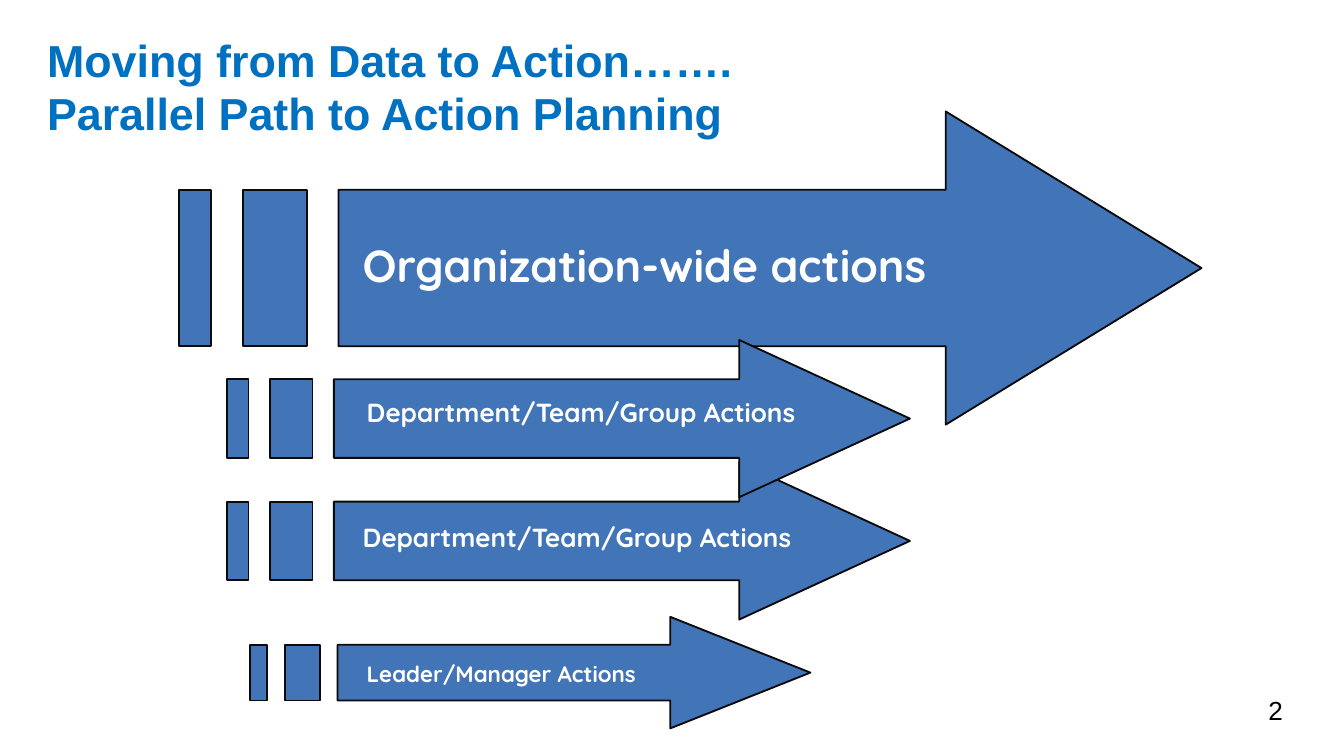
from dataclasses import dataclass

from pptx import Presentation
from pptx.dml.color import RGBColor
from pptx.enum.text import MSO_ANCHOR, MSO_AUTO_SIZE, PP_ALIGN
from pptx.shapes.autoshape import Shape
from pptx.slide import Slide
from pptx.text.text import TextFrame
from pptx.util import Inches, Pt

LEFT = PP_ALIGN.LEFT
TOP = MSO_ANCHOR.TOP
NO_AUTOFIT = MSO_AUTO_SIZE.NONE
TITLE_ONLY_LAYOUT = 5

TITLE_BLUE = "0070C0"
ARROW_BLUE = "4274B8"
OUTLINE = "0A0A0A"
WHITE = "FFFFFF"
BLACK = "000000"

# Every arrow fills a grid of 32 columns by 4 rows.
GRID_COLUMNS, GRID_ROWS = 32, 4
ARROW_HEAD_AND_SHAFT = [(24, 0), (24, 1), (5, 1), (5, 3), (24, 3), (24, 4), (32, 2)]
WIDE_STRIPE = [(2, 1), (2, 3), (4, 3), (4, 1)]
NARROW_STRIPE = [(0, 1), (0, 3), (1, 3), (1, 1)]


@dataclass(frozen=True)
class Box:
    left: float
    top: float
    width: float
    height: float


@dataclass(frozen=True)
class ActionLevel:
    label: str
    arrow: Box
    label_box: Box
    label_size: int


# Back to front: the upper department arrow overlaps its neighbours.
ACTION_LEVELS = [
    ActionLevel("Department/Team/Group Actions",
                Box(1.69, 3.44, 5.08, 1.17), Box(2.6, 3.83, 3.43, 0.69), 14),
    ActionLevel("Organization-wide actions",
                Box(1.33, 0.83, 7.61, 2.33), Box(2.6, 1.72, 5.22, 0.81), 24),
    ActionLevel("Department/Team/Group Actions",
                Box(1.69, 2.53, 5.08, 1.17), Box(2.63, 2.9, 3.8, 0.34), 14),
    ActionLevel("Leader/Manager Actions",
                Box(1.86, 4.59, 4.17, 0.83), Box(2.63, 4.86, 3.1, 0.53), 12),
]


def color(hex_code: str) -> RGBColor:
    return RGBColor.from_string(hex_code)


def place(shape: Shape, box: Box) -> None:
    for side in ("left", "top", "width", "height"):
        setattr(shape, side, Inches(getattr(box, side)))


def write(frame: TextFrame, lines: list[str], size: int, font_name: str,
          hex_code: str, bold: bool = False, wrap: bool = True) -> None:
    frame_format = {"word_wrap": wrap, "vertical_anchor": TOP, "auto_size": NO_AUTOFIT}
    for attribute, value in frame_format.items():
        setattr(frame, attribute, value)
    frame.text = "\n".join(lines)
    font_format = {"name": font_name, "size": Pt(size), "bold": bold}
    for paragraph in frame.paragraphs:
        paragraph.alignment = LEFT
        for attribute, value in font_format.items():
            setattr(paragraph.font, attribute, value)
        paragraph.font.color.rgb = color(hex_code)


def add_label(slide: Slide, box: Box, text: str, size: int, font_name: str,
              hex_code: str, bold: bool = False) -> None:
    label = slide.shapes.add_textbox(
        Inches(box.left), Inches(box.top), Inches(box.width), Inches(box.height))
    write(label.text_frame, [text], size, font_name, hex_code, bold)


def add_striped_arrow(slide: Slide, box: Box) -> None:
    scale = (Inches(box.width) / GRID_COLUMNS, Inches(box.height) / GRID_ROWS)
    start, *outline = ARROW_HEAD_AND_SHAFT
    builder = slide.shapes.build_freeform(*start, scale=scale)
    builder.add_line_segments(outline, close=True)
    for corner, *others in (WIDE_STRIPE, NARROW_STRIPE):
        builder.move_to(*corner)
        builder.add_line_segments(others, close=True)
    arrow = builder.convert_to_shape(Inches(box.left), Inches(box.top))
    arrow.shadow.inherit = False
    arrow.fill.solid()
    arrow.fill.fore_color.rgb = color(ARROW_BLUE)
    arrow.line.color.rgb = color(OUTLINE)
    arrow.line.width = Pt(1)


def main() -> None:
    presentation = Presentation()
    presentation.slide_width = Inches(10)
    presentation.slide_height = Inches(10 * 9 / 16)
    slide = presentation.slides.add_slide(presentation.slide_layouts[TITLE_ONLY_LAYOUT])

    title = slide.shapes.title
    place(title, Box(0.25, 0.19, 5.36, 0.91))
    write(title.text_frame,
          ["Moving from Data to Action…….", "Parallel Path to Action Planning"],
          24, "Arial", TITLE_BLUE, bold=True, wrap=False)

    add_label(slide, Box(9.34, 5.12, 0.5, 0.27), "2", 14, "Arial", BLACK)

    for level in ACTION_LEVELS:
        add_striped_arrow(slide, level.arrow)
        add_label(slide, level.label_box, level.label, level.label_size,
                  "Quicksand", WHITE, bold=True)

    presentation.save("out.pptx")


if __name__ == "__main__":
    main()
